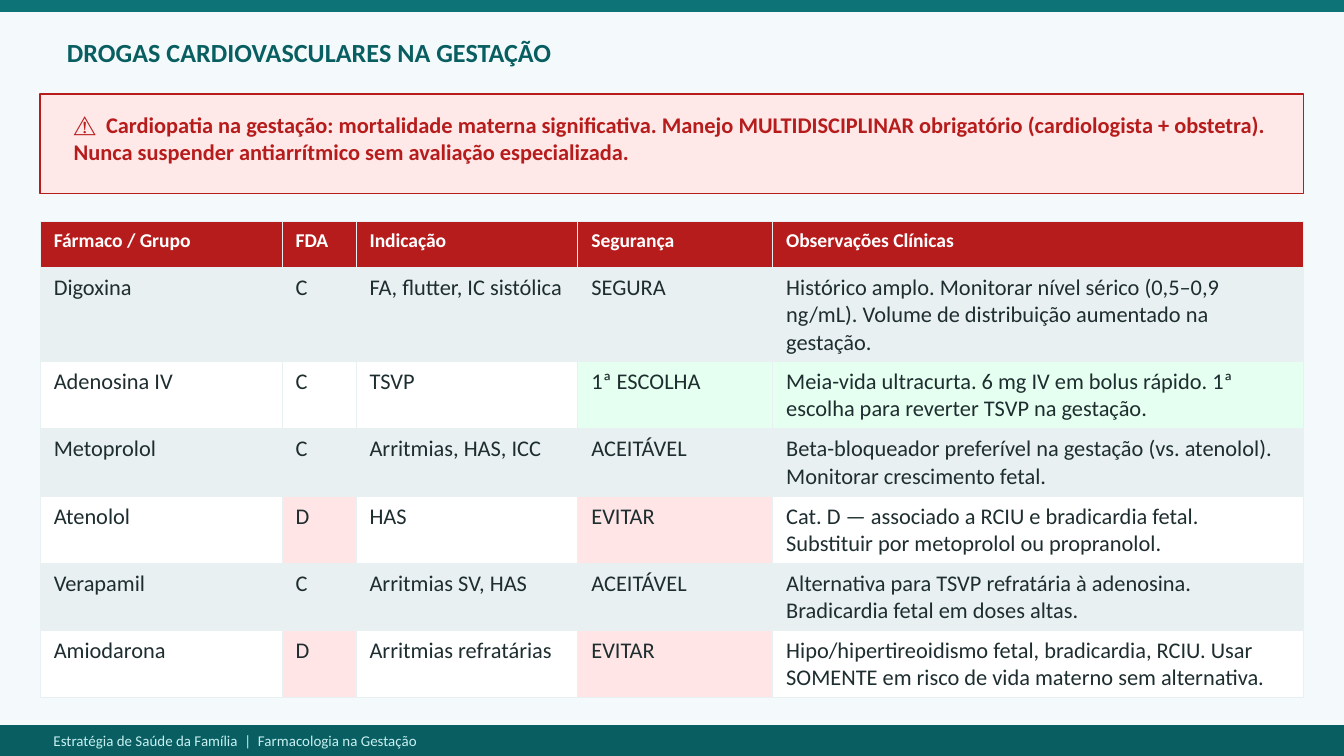
"""Build the slide on cardiovascular drugs in pregnancy."""
from lxml.etree import SubElement
from pptx import Presentation
from pptx.dml.color import RGBColor
from pptx.enum.shapes import MSO_SHAPE
from pptx.enum.text import MSO_ANCHOR
from pptx.oxml.ns import qn
from pptx.util import Inches, Pt

FONT = "Calibri"
COLORS = {
    "background": "F4FAFB", "teal": "0D7377", "dark_teal": "085E61",
    "pale_teal": "C8F0F1", "red": "B71C1C", "alert": "FFE8E8",
    "avoid": "FFE5E5", "preferred": "E5FFF0", "band": "E8F0F1",
    "white": "FFFFFF", "ink": "1E2D2F",
}
TITLE = "DROGAS CARDIOVASCULARES NA GESTAÇÃO"
FOOTER = "Estratégia de Saúde da Família  |  Farmacologia na Gestação"
WARNING = (
    "⚠  Cardiopatia na gestação: mortalidade materna significativa. "
    "Manejo MULTIDISCIPLINAR obrigatório (cardiologista + obstetra). "
    "Nunca suspender antiarrítmico sem avaliação especializada."
)
HEADER = ("Fármaco / Grupo", "FDA", "Indicação", "Segurança", "Observações Clínicas")
DRUGS = [
    ("Digoxina", "C", "FA, flutter, IC sistólica", "SEGURA",
     "Histórico amplo. Monitorar nível sérico (0,5–0,9 ng/mL). "
     "Volume de distribuição aumentado na gestação."),
    ("Adenosina IV", "C", "TSVP", "1ª ESCOLHA",
     "Meia-vida ultracurta. 6 mg IV em bolus rápido. "
     "1ª escolha para reverter TSVP na gestação."),
    ("Metoprolol", "C", "Arritmias, HAS, ICC", "ACEITÁVEL",
     "Beta-bloqueador preferível na gestação (vs. atenolol). "
     "Monitorar crescimento fetal."),
    ("Atenolol", "D", "HAS", "EVITAR",
     "Cat. D — associado a RCIU e bradicardia fetal. "
     "Substituir por metoprolol ou propranolol."),
    ("Verapamil", "C", "Arritmias SV, HAS", "ACEITÁVEL",
     "Alternativa para TSVP refratária à adenosina. "
     "Bradicardia fetal em doses altas."),
    ("Amiodarona", "D", "Arritmias refratárias", "EVITAR",
     "Hipo/hipertireoidismo fetal, bradicardia, RCIU. "
     "Usar SOMENTE em risco de vida materno sem alternativa."),
]
COLUMN_WIDTHS = (1.8, 0.55, 1.65, 1.45, 3.95)
TABLE_HEIGHT, HEADER_HEIGHT, ROW_HEIGHT = 3.54, 0.34, 0.49
BARS = [
    ((0, 0, 10, 0.08), "teal", "teal"),
    ((0, 5.4, 10, 0.23), "dark_teal", "dark_teal"),
    ((0.3, 0.7, 9.4, 0.74), "alert", "red"),
]
TEXTS = [
    (FOOTER, (0.3, 5.41, 9.4, 0.2), 8, "pale_teal", False),
    (TITLE, (0.4, 0.15, 9.2, 0.48), 14, "dark_teal", True),
    (WARNING, (0.45, 0.49, 9.1, 1.07), 12, "red", True),
]


def color(name):
    return RGBColor.from_string(COLORS[name])


def write(frame, text, size, ink, bold):
    frame.word_wrap = True
    paragraph = frame.paragraphs[0]
    paragraph.text = text
    font = paragraph.font
    font.name, font.size, font.bold = FONT, Pt(size), bold
    font.color.rgb = color(ink)


def add_bar(page, place, fill, line):
    bar = page.shapes.add_shape(MSO_SHAPE.RECTANGLE, *map(Inches, place))
    bar.shadow.inherit = False
    bar.fill.solid()
    bar.fill.fore_color.rgb = color(fill)
    bar.line.color.rgb = color(line)
    bar.line.width = Pt(1)


def add_text(page, text, place, size, ink, bold):
    frame = page.shapes.add_textbox(*map(Inches, place)).text_frame
    frame.vertical_anchor = MSO_ANCHOR.MIDDLE
    write(frame, text, size, ink, bold)


def add_borders(cell):
    properties = cell._tc.get_or_add_tcPr()
    for side in ("a:lnL", "a:lnR", "a:lnT", "a:lnB"):
        line = SubElement(properties, qn(side), w=str(Pt(0.5)))
        fill = SubElement(line, qn("a:solidFill"))
        SubElement(fill, qn("a:srgbClr"), val=COLORS["band"])


def cell_fill(text, row):
    if row == 0:
        return "red"
    if text in ("D", "EVITAR"):
        return "avoid"
    if "1ª" in text:
        return "preferred"
    return "band" if row % 2 else "white"


def add_drug_table(page):
    rows = [HEADER, *DRUGS]
    heights = [HEADER_HEIGHT] + [ROW_HEIGHT] * len(DRUGS)
    place = (0.3, 1.65, sum(COLUMN_WIDTHS), TABLE_HEIGHT)
    holder = page.shapes.add_table(len(rows), len(HEADER), *map(Inches, place))
    table = holder.table
    for column, width in zip(table.columns, COLUMN_WIDTHS):
        column.width = Inches(width)
    for row, (texts, height) in enumerate(zip(rows, heights)):
        table.rows[row].height = Inches(height)
        style = (12, "ink", False) if row else (10.5, "white", True)
        for column, text in enumerate(texts):
            cell = table.cell(row, column)
            add_borders(cell)
            cell.fill.solid()
            cell.fill.fore_color.rgb = color(cell_fill(text, row))
            write(cell.text_frame, text, *style)
    holder.height = Inches(TABLE_HEIGHT)


def main():
    deck = Presentation()
    deck.slide_width = Inches(10)
    deck.slide_height = deck.slide_width * 9 // 16
    page = deck.slides.add_slide(deck.slide_layouts[6])
    page.background.fill.solid()
    page.background.fill.fore_color.rgb = color("background")
    for bar in BARS:
        add_bar(page, *bar)
    for text in TEXTS:
        add_text(page, *text)
    add_drug_table(page)
    deck.save("out.pptx")


if __name__ == "__main__":
    main()
